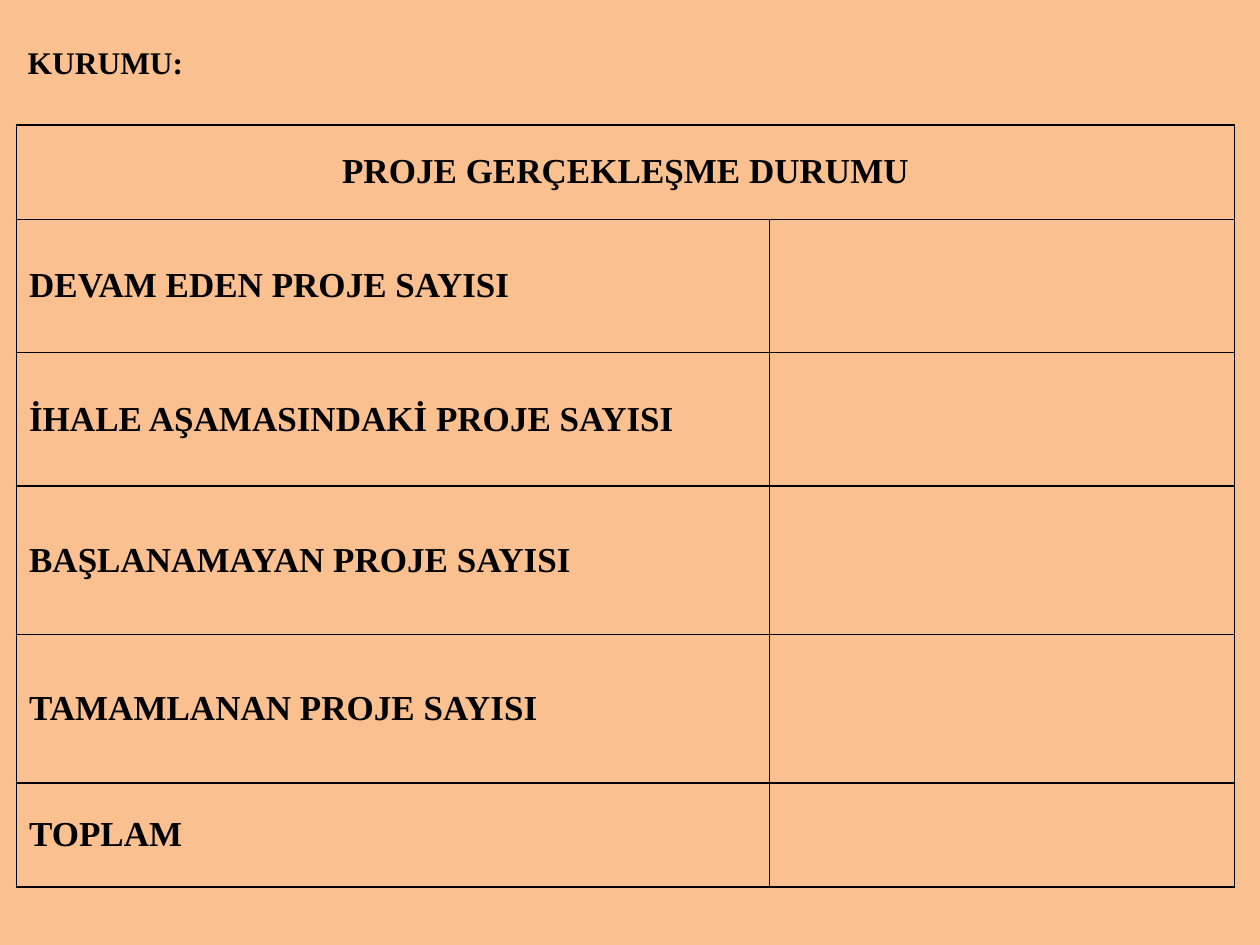
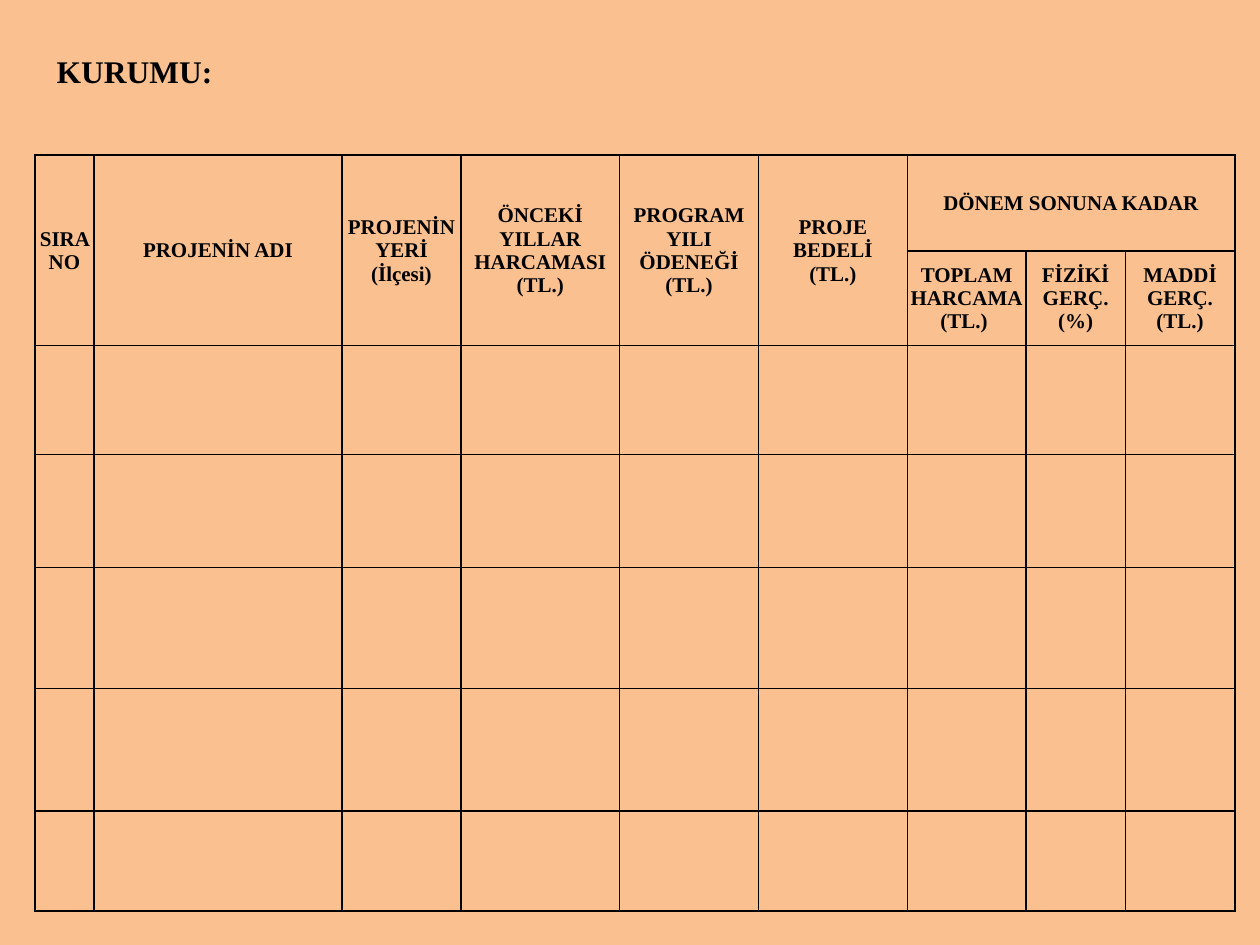
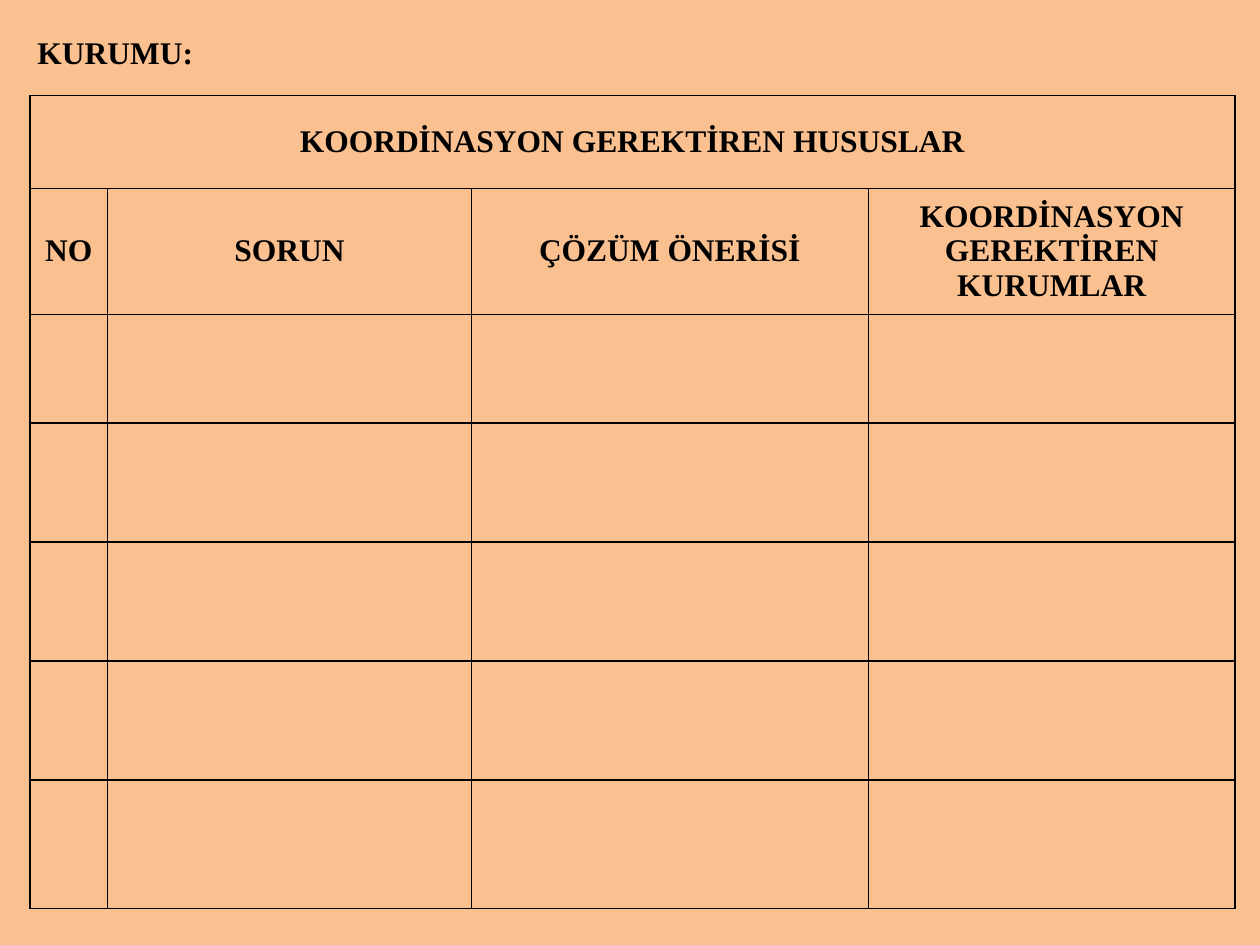
from lxml import etree
from pptx import Presentation
from pptx.dml.color import RGBColor
from pptx.enum.text import MSO_ANCHOR, MSO_AUTO_SIZE, PP_ALIGN
from pptx.oxml.ns import qn
from pptx.util import Pt

LEFT, CENTER = PP_ALIGN.LEFT, PP_ALIGN.CENTER
TOP, MIDDLE = MSO_ANCHOR.TOP, MSO_ANCHOR.MIDDLE
NO_AUTO_SIZE = MSO_AUTO_SIZE.NONE

COLORS = {"background": "FAC090", "ink": "000000"}
FONT = "Times New Roman"
TITLE_SIZE = 18
TITLE_ONLY_LAYOUT = 5
BORDER_WIDTH = 1
WIDE_MARGINS = (7.2, 3.6, 7.2, 3.6)
TIGHT_MARGINS = (0.7, 0.7, 0.7, 0)


class FormDeck:
    """Holds the shared style and the slide being built."""

    def __init__(self):
        self.presentation = Presentation()
        self.presentation.slide_width = Pt(720)
        self.presentation.slide_height = Pt(540)
        fill = self.presentation.slide_master.background.fill
        fill.solid()
        fill.fore_color.rgb = RGBColor.from_string(COLORS["background"])
        self.slide = None

    def add_slide(self, title, left, top):
        layout = self.presentation.slide_layouts[TITLE_ONLY_LAYOUT]
        self.slide = self.presentation.slides.add_slide(layout)
        shape = self.slide.shapes.title
        shape.left, shape.top = Pt(left), Pt(top)
        shape.width, shape.height = Pt(104.4), Pt(28.8)
        text_frame = shape.text_frame
        text_frame.text = title
        text_frame.word_wrap = False
        text_frame.auto_size = NO_AUTO_SIZE
        text_frame.vertical_anchor = TOP
        self.format_text(text_frame, TITLE_SIZE, LEFT)

    def format_text(self, text_frame, size, alignment):
        for paragraph in text_frame.paragraphs:
            paragraph.alignment = alignment
            for run in paragraph.runs:
                run.font.name = FONT
                run.font.size = Pt(size)
                run.font.bold = True
                run.font.color.rgb = RGBColor.from_string(COLORS["ink"])

    def add_table(self, left, top, widths, heights, margins=WIDE_MARGINS):
        frame = self.slide.shapes.add_table(
            len(heights), len(widths), Pt(left), Pt(top),
            Pt(sum(widths)), Pt(sum(heights)))
        table = frame.table
        table.first_row = table.horz_banding = False
        for column, width in zip(table.columns, widths):
            column.width = Pt(width)
        for row, height in zip(table.rows, heights):
            row.height = Pt(height)
        for cell in table.iter_cells():
            cell.margin_left, cell.margin_top, cell.margin_right, cell.margin_bottom = map(Pt, margins)
            cell.vertical_anchor = MIDDLE
            self.add_borders(cell)
            cell.fill.background()
        return table

    def add_borders(self, cell):
        properties = cell._tc.get_or_add_tcPr()
        for side in ("lnL", "lnR", "lnT", "lnB"):
            line = etree.SubElement(properties, qn(f"a:{side}"), w=str(Pt(BORDER_WIDTH)))
            fill = etree.SubElement(line, qn("a:solidFill"))
            etree.SubElement(fill, qn("a:srgbClr"), val=COLORS["ink"])

    def write_cell(self, cell, text, size, alignment=CENTER, merge_to=None):
        if merge_to is not None:
            cell.merge(merge_to)
        cell.text_frame.text = text
        self.format_text(cell.text_frame, size, alignment)


def add_project_status(deck):
    deck.add_slide("KURUMU:", 8.6, 20.9)
    table = deck.add_table(9.4, 71.3, [430.4, 265.8],
                           [54, 76.3, 76.3, 84.8, 84.8, 59.4])
    deck.write_cell(table.cell(0, 0), "PROJE GERÇEKLEŞME DURUMU", 20,
                    merge_to=table.cell(0, 1))
    labels = ["DEVAM EDEN PROJE SAYISI", "İHALE AŞAMASINDAKİ PROJE SAYISI",
              "BAŞLANAMAYAN PROJE SAYISI", "TAMAMLANAN PROJE SAYISI", "TOPLAM"]
    for row, label in enumerate(labels, start=1):
        deck.write_cell(table.cell(row, 0), label, 20, LEFT)


def add_project_list(deck):
    deck.add_slide("KURUMU:", 25.2, 25.9)
    table = deck.add_table(
        19.9, 88.6, [33.8, 141.8, 67.9, 90.7, 79.4, 85, 67.9, 56.7, 62.6],
        [54.7, 53.4, 62.5, 64.6, 69, 70, 57.4], TIGHT_MARGINS)

    # Headings over two rows
    tall_headings = ["SIRA NO", "PROJENİN ADI", "PROJENİN YERİ (İlçesi)",
                     "ÖNCEKİ YILLAR HARCAMASI (TL.)",
                     "PROGRAM YILI ÖDENEĞİ (TL.)", "PROJE BEDELİ\n(TL.)"]
    for column, heading in enumerate(tall_headings):
        deck.write_cell(table.cell(0, column), heading, 12,
                        merge_to=table.cell(1, column))

    # Group heading and its three columns
    first = len(tall_headings)
    deck.write_cell(table.cell(0, first), "DÖNEM SONUNA KADAR", 12,
                    merge_to=table.cell(0, first + 2))
    period_headings = ["TOPLAM HARCAMA\n(TL.) ", "FİZİKİ GERÇ. (%)", "MADDİ GERÇ.\n(TL.)"]
    for column, heading in enumerate(period_headings, start=first):
        deck.write_cell(table.cell(1, column), heading, 12)


def add_coordination_issues(deck):
    deck.add_slide("KURUMU:", 14.2, 15)
    table = deck.add_table(17, 54.6, [44.5, 207.9, 226.8, 209.6],
                           [53, 72, 62.1, 68, 68, 68, 73.7])
    deck.write_cell(table.cell(0, 0), "KOORDİNASYON GEREKTİREN HUSUSLAR", 18,
                    merge_to=table.cell(0, 3))
    headings = ["NO", "SORUN", "ÇÖZÜM ÖNERİSİ", "KOORDİNASYON GEREKTİREN KURUMLAR"]
    for column, heading in enumerate(headings):
        deck.write_cell(table.cell(1, column), heading, 18)


def main():
    deck = FormDeck()
    add_project_status(deck)
    add_project_list(deck)
    add_coordination_issues(deck)
    deck.presentation.save("out.pptx")


if __name__ == "__main__":
    main()
